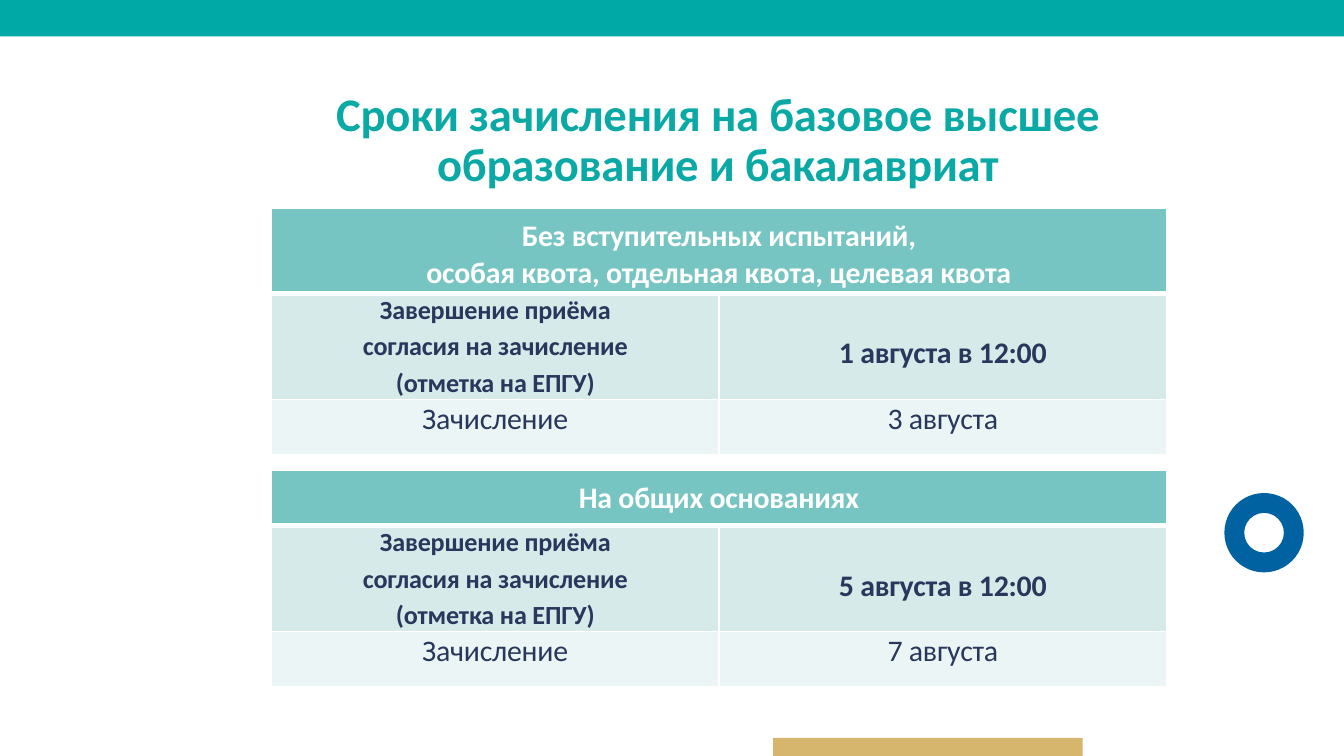
from lxml.etree import SubElement
from pptx import Presentation
from pptx.dml.color import RGBColor
from pptx.enum.shapes import MSO_SHAPE
from pptx.enum.text import MSO_ANCHOR, MSO_AUTO_SIZE, PP_ALIGN
from pptx.oxml.ns import qn
from pptx.util import Cm, Pt

COLORS = {
    "teal": "00A9A6",
    "title": "0AA9A6",
    "gold": "D6B56C",
    "blue": "0062A1",
    "header": "77C5C3",
    "deadline": "D5EAE9",
    "enrolment": "EBF5F5",
    "ink": "28375B",
    "white": "FFFFFF",
}
FONT = "Calibri"
COLUMN_WIDTH = 8.46
DEADLINE = ["Завершение приёма", "согласия на зачисление", "(отметка на ЕПГУ)"]


class SlideBuilder:
    def __init__(self, deck):
        self.page = deck.slides.add_slide(deck.slide_layouts[5])

    def color(self, name):
        return RGBColor.from_string(COLORS[name])

    def add_lines(self, frame, lines, size, color, bold=True, gap=0):
        frame.word_wrap = True
        for index, line in enumerate(lines):
            para = frame.paragraphs[0] if index == 0 else frame.add_paragraph()
            para.alignment = PP_ALIGN.CENTER
            para.space_before = Pt(gap if index else 0)
            span = para.add_run()
            span.text = line
            span._r.get_or_add_rPr().set("spc", "-10")
            para.font.name = FONT
            para.font.size = Pt(size)
            para.font.bold = bold
            para.font.color.rgb = self.color(color)

    def title(self, text, left, top, width, height):
        box = self.page.shapes.title
        box.left, box.top, box.width, box.height = map(Cm, (left, top, width, height))
        frame = box.text_frame
        frame.auto_size = MSO_AUTO_SIZE.NONE
        frame.vertical_anchor = MSO_ANCHOR.TOP
        frame.margin_left = frame.margin_bottom = 0
        frame.margin_right, frame.margin_top = Cm(0.65), Cm(0.3)
        self.add_lines(frame, [text], 25, "title")
        frame.paragraphs[0].line_spacing = Pt(27)

    def shape(self, kind, color, left, top, width, height):
        shape = self.page.shapes.add_shape(kind, *map(Cm, (left, top, width, height)))
        shape.shadow.inherit = False
        shape.fill.solid()
        shape.fill.fore_color.rgb = self.color(color)
        shape.line.fill.background()
        return shape

    def borders(self, cell, widths):
        properties = cell._tc.get_or_add_tcPr()
        for side, width in zip("LRTB", widths):
            line = SubElement(properties, qn(f"a:ln{side}"), w=str(Pt(width)))
            fill = SubElement(line, qn("a:solidFill"))
            SubElement(fill, qn("a:srgbClr"), val=COLORS["white"])

    def cell(self, cell, lines, fill, size, color="ink", bold=True, top=0.03,
             gap=0, widths=(1, 1, 1, 1)):
        self.borders(cell, widths)
        cell.fill.solid()
        cell.fill.fore_color.rgb = self.color(fill)
        cell.margin_left = cell.margin_right = cell.margin_bottom = 0
        cell.margin_top = Cm(top)
        cell.vertical_anchor = MSO_ANCHOR.TOP
        self.add_lines(cell.text_frame, lines, size, color, bold, gap)

    def schedule(self, top, header_height, header, deadline, enrolment):
        heights = [header_height, 2, 1.04]
        frame = self.page.shapes.add_table(
            3, 2, Cm(5.13), Cm(top), Cm(2 * COLUMN_WIDTH), Cm(sum(heights)))
        table = frame.table
        table.horz_banding = False
        for column in table.columns:
            column.width = Cm(COLUMN_WIDTH)
        for row, height in zip(table.rows, heights):
            row.height = Cm(height)
        table.cell(0, 0).merge(table.cell(0, 1))
        self.cell(table.cell(0, 0), header, "header", 16, "white",
                  top=0.19, widths=(1, 1, 1, 3))
        below_header = (1, 1, 3, 1)
        self.cell(table.cell(1, 0), DEADLINE, "deadline", 14, gap=2.5,
                  widths=below_header)
        self.cell(table.cell(1, 1), [deadline], "deadline", 16, top=0.8,
                  widths=below_header)
        for column, text in enumerate(["Зачисление", enrolment]):
            self.cell(table.cell(2, column), [text], "enrolment", 16, bold=False)


def main():
    deck = Presentation()
    deck.slide_width, deck.slide_height = Cm(25.4), Cm(14.29)
    builder = SlideBuilder(deck)
    builder.shape(MSO_SHAPE.RECTANGLE, "teal", 0, 0, 25.4, 0.69)
    builder.shape(MSO_SHAPE.RECTANGLE, "gold", 14.61, 13.95, 5.85, 0.34)
    ring = builder.shape(MSO_SHAPE.DONUT, "blue", 23.14, 9.32, 1.5, 1.5)
    ring.adjustments[0] = 0.25
    builder.title("Сроки зачисления на базовое высшее образование и бакалавриат",
                  5.28, 1.4, 17.22, 2.49)
    builder.schedule(
        3.94, 1.6,
        ["Без вступительных испытаний,", "особая квота, отдельная квота, целевая квота"],
        "1 августа в 12:00", "3 августа")
    builder.schedule(8.89, 1.04, ["На общих основаниях"],
                     "5 августа в 12:00", "7 августа")
    deck.save("out.pptx")


if __name__ == "__main__":
    main()
